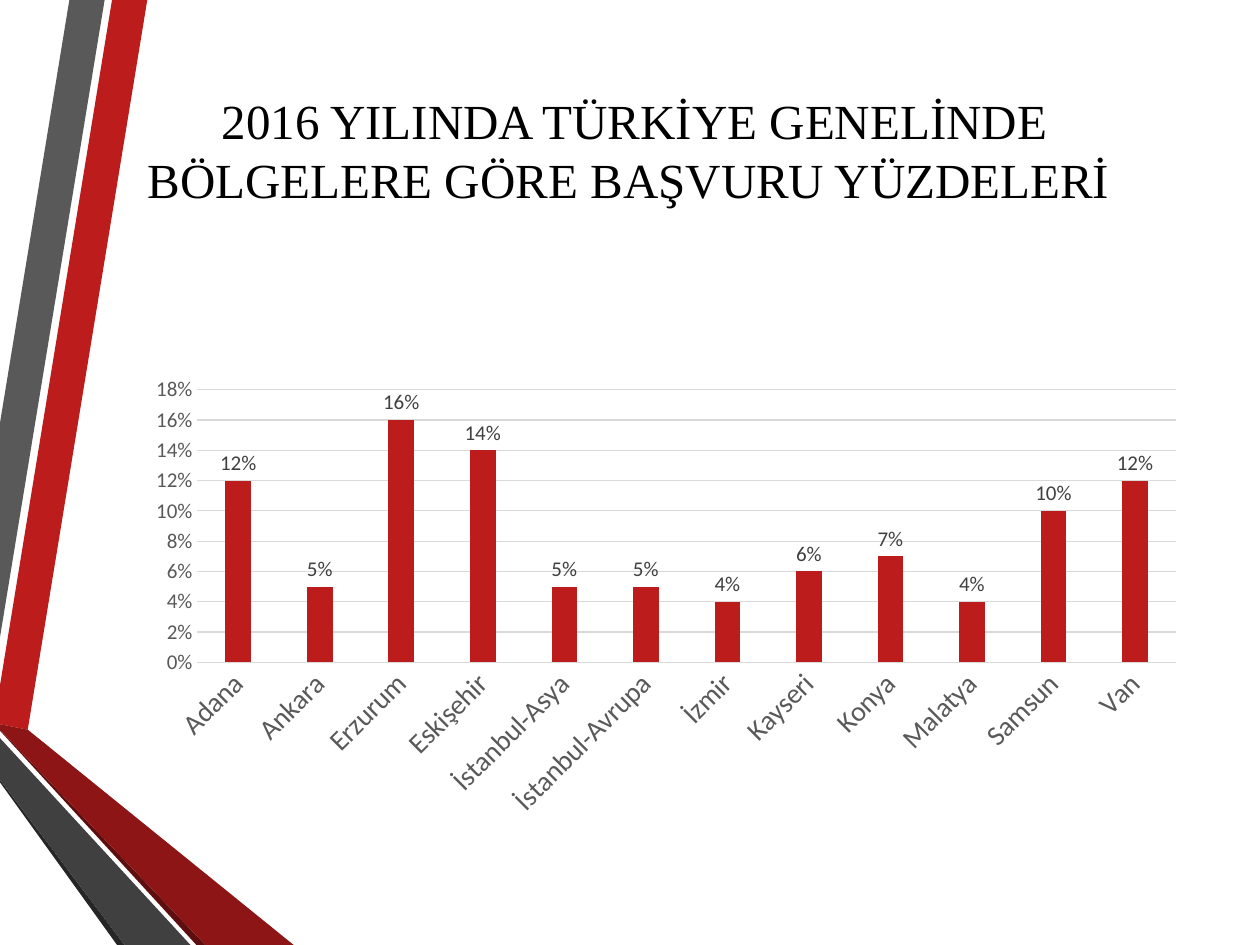
import pptx
import pptx.chart.data
import pptx.dml.color
import pptx.enum.chart
import pptx.enum.text
import pptx.util

Cm = pptx.util.Cm
Pt = pptx.util.Pt
enum = pptx.enum.chart

HUES = {
    "red": "BC1C1C", "gray": "595959", "black": "262626", "wine": "5E0E0E",
    "brick": "8D1515", "dark": "404040", "rule": "D9D9D9", "title": "000000",
}
BANDS = [
    ("red", [(0, 13.82), (0, 14.6), (0.56, 14.71), (2.97, 0), (2.26, 0)]),
    ("gray", [(2.11, 0), (1.4, 0), (0, 8.53), (0, 12.85)]),
    ("black", [(0, 15.72), (0, 15.77), (2.36, 19.05), (2.51, 19.05)]),
    ("wine", [(0, 14.71), (0, 14.73), (3.96, 19.05), (4.14, 19.05)]),
    ("brick", [(0, 14.71), (4.14, 19.05), (5.92, 19.05), (0.56, 14.71), (0, 14.6)]),
    ("dark", [(0, 15.72), (2.51, 19.05), (3.84, 19.05), (0, 14.88)]),
]
RATES = {
    "Adana": 0.12, "Ankara": 0.05, "Erzurum": 0.16, "Eskişehir": 0.14,
    "İstanbul-Asya": 0.05, "İstanbul-Avrupa": 0.05, "İzmir": 0.04,
    "Kayseri": 0.06, "Konya": 0.07, "Malatya": 0.04, "Samsun": 0.1, "Van": 0.12,
}


def tint(name):
    return pptx.dml.color.RGBColor.from_string(HUES[name])


def style(font, size, name, face="Calibri"):
    font.size = Pt(size)
    font.name = face
    font.bold = False
    font.color.rgb = tint(name)


deck = pptx.Presentation()
deck.slide_width = Cm(25.4)
deck.slide_height = Cm(19.05)
slide = deck.slides.add_slide(deck.slide_layouts[6])

for hue, spots in BANDS:
    spots = [(Cm(x), Cm(y)) for x, y in spots]
    pen = slide.shapes.build_freeform(*spots[0])
    pen.add_line_segments(spots[1:], close=True)
    band = pen.convert_to_shape()
    band.shadow.inherit = False
    band.fill.solid()
    band.fill.fore_color.rgb = tint(hue)
    band.line.fill.background()

title = slide.shapes.add_textbox(Cm(1.27), Cm(0.91), Cm(23.04), Cm(4.22))
frame = title.text_frame
frame.word_wrap = True
frame.vertical_anchor = pptx.enum.text.MSO_ANCHOR.MIDDLE
frame.text = "2016 YILINDA TÜRKİYE GENELİNDE BÖLGELERE GÖRE BAŞVURU YÜZDELERİ "
line = frame.paragraphs[0]
line.alignment = pptx.enum.text.PP_ALIGN.CENTER
style(line.runs[0].font, 28, "title", "Times New Roman")

data = pptx.chart.data.CategoryChartData(number_format="0%")
data.categories = list(RATES)
data.add_series("Series 1", list(RATES.values()))
chart = slide.shapes.add_chart(
    enum.XL_CHART_TYPE.COLUMN_CLUSTERED,
    Cm(2.72), Cm(7.42), Cm(21.41), Cm(9.25), data,
).chart
chart.has_title = False
chart.has_legend = False
style(chart.font, 10, "title")

plot = chart.plots[0]
plot.gap_width = 219
plot.overlap = -27
plot.vary_by_categories = False
bars = plot.series[0].format.fill
bars.solid()
bars.fore_color.rgb = tint("red")

plot.has_data_labels = True
marks = plot.data_labels
marks.show_value = True
marks.position = enum.XL_LABEL_POSITION.OUTSIDE_END
marks.number_format = "0%"
marks.number_format_is_linked = False
style(marks.font, 12, "dark")

for axis, size in ((chart.category_axis, 16), (chart.value_axis, 12)):
    axis.major_tick_mark = enum.XL_TICK_MARK.NONE
    axis.minor_tick_mark = enum.XL_TICK_MARK.NONE
    style(axis.tick_labels.font, size, "gray")

base = chart.category_axis
base.format.line.color.rgb = tint("rule")
base.format.line.width = Pt(0.75)
turn = base._element.txPr.bodyPr
turn.set("rot", "-2700000")
turn.set("vert", "horz")

scale = chart.value_axis
scale.minimum_scale = 0
scale.maximum_scale = 0.18
scale.major_unit = 0.02
scale.tick_labels.number_format = "0%"
scale.tick_labels.number_format_is_linked = False
scale.format.line.fill.background()
scale.has_major_gridlines = True
grid = scale.major_gridlines.format.line
grid.color.rgb = tint("rule")
grid.width = Pt(0.75)

deck.save("out.pptx")
